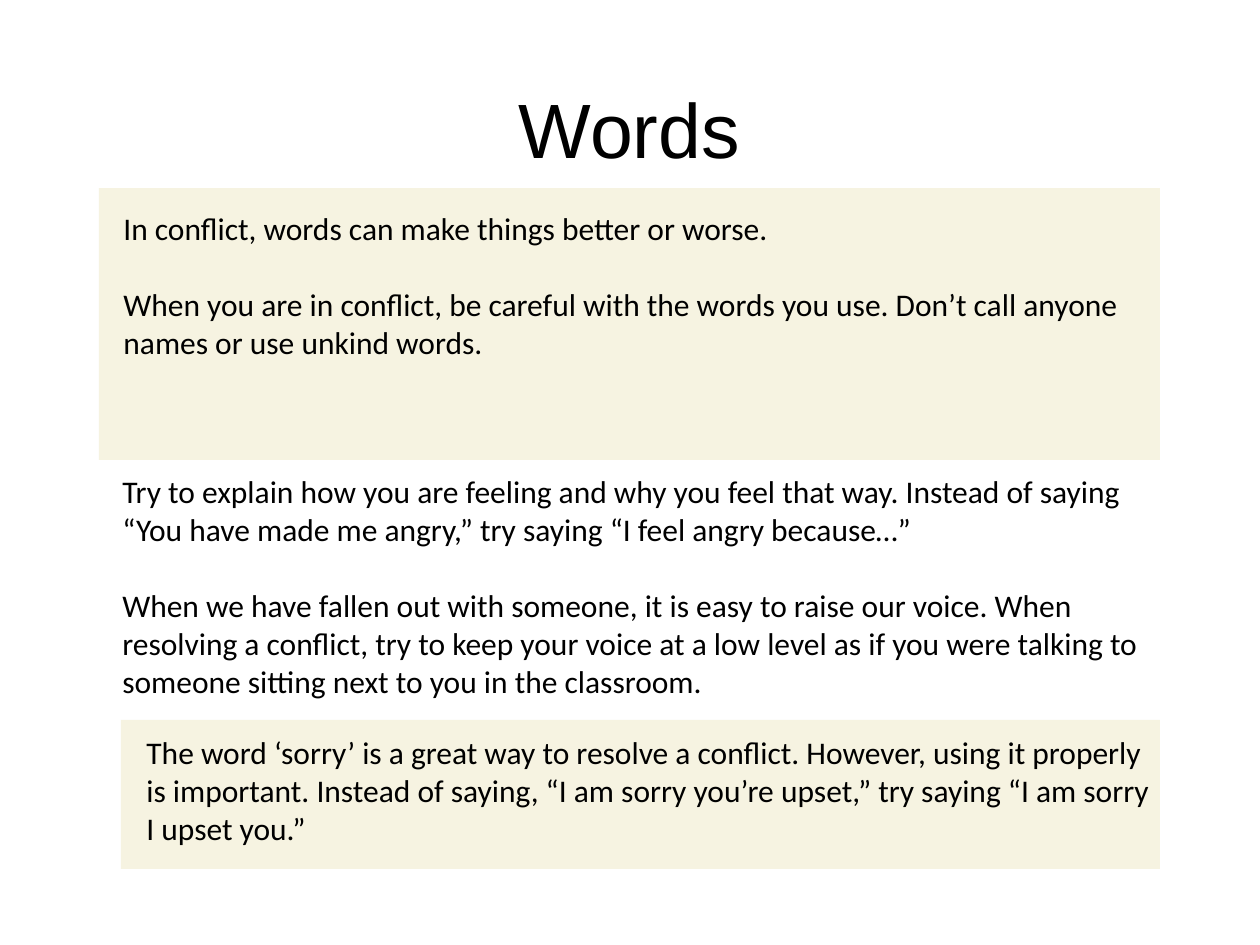
from typing import NamedTuple

from pptx import Presentation
from pptx.dml.color import RGBColor
from pptx.enum.shapes import MSO_SHAPE
from pptx.enum.text import MSO_ANCHOR, MSO_AUTO_SIZE, PP_ALIGN
from pptx.slide import Slide
from pptx.text.text import Font
from pptx.util import Emu, Pt

EMU_PER_PX = 914400 / 126
BLACK = "000000"
CREAM = "F6F3E1"


class Box(NamedTuple):
    left: int
    top: int
    width: int
    height: int


class Advice(NamedTuple):
    box: Box
    paragraphs: list[str]


PANELS = [Box(99, 188, 1061, 272), Box(121, 720, 1039, 149)]

ADVICE = [
    Advice(Box(111, 203, 1037, 165), [
        "In conflict, words can make things better or worse.",
        "When you are in conflict, be careful with the words you use. "
        "Don’t call anyone names or use unkind words.",
    ]),
    Advice(Box(110, 466, 1085, 242), [
        "Try to explain how you are feeling and why you feel that way. Instead of saying "
        "“You have made me angry,” try saying “I feel angry because…”",
        "When we have fallen out with someone, it is easy to raise our voice. When resolving "
        "a conflict, try to keep your voice at a low level as if you were talking to someone "
        "sitting next to you in the classroom.",
    ]),
    Advice(Box(134, 727, 1037, 127), [
        "The word ‘sorry’ is a great way to resolve a conflict. However, using it properly is "
        "important. Instead of saying, “I am sorry you’re upset,” try saying “I am sorry I "
        "upset you.”",
    ]),
]


def px(length: int) -> Emu:
    return Emu(round(length * EMU_PER_PX))


def color(value: str) -> RGBColor:
    return RGBColor.from_string(value)


def style_font(font: Font, name: str, size: int) -> None:
    font.name = name
    font.size = Pt(size)
    font.color.rgb = color(BLACK)


def place_title(slide: Slide, wording: str, box: Box) -> None:
    title = slide.shapes.title
    title.left, title.top, title.width, title.height = map(px, box)
    frame = title.text_frame
    frame.text = wording
    frame.auto_size = MSO_AUTO_SIZE.NONE
    frame.vertical_anchor = MSO_ANCHOR.MIDDLE
    frame.margin_bottom = px(20)
    heading = frame.paragraphs[0]
    heading.alignment = PP_ALIGN.CENTER
    style_font(heading.runs[0].font, "Arial", 44)


def draw_panel(slide: Slide, box: Box) -> None:
    panel = slide.shapes.add_shape(MSO_SHAPE.RECTANGLE, *map(px, box))
    panel.shadow.inherit = False
    panel.fill.solid()
    panel.fill.fore_color.rgb = color(CREAM)
    panel.line.fill.background()


def write_advice(slide: Slide, advice: Advice) -> None:
    frame = slide.shapes.add_textbox(*map(px, advice.box)).text_frame
    frame.word_wrap = True
    frame.auto_size = MSO_AUTO_SIZE.SHAPE_TO_FIT_TEXT
    frame.text = "\n".join(advice.paragraphs)
    for index, paragraph in enumerate(frame.paragraphs):
        if index:
            paragraph.space_before = Pt(22)
        style_font(paragraph.runs[0].font, "Calibri", 18)


def main() -> None:
    presentation = Presentation()
    presentation.slide_width = px(1260)
    presentation.slide_height = px(945)
    slide = presentation.slides.add_slide(presentation.slide_layouts[5])
    place_title(slide, "Words", Box(63, 66, 1133, 137))
    for panel in PANELS:
        draw_panel(slide, panel)
    for advice in ADVICE:
        write_advice(slide, advice)
    presentation.save("out.pptx")


if __name__ == "__main__":
    main()
